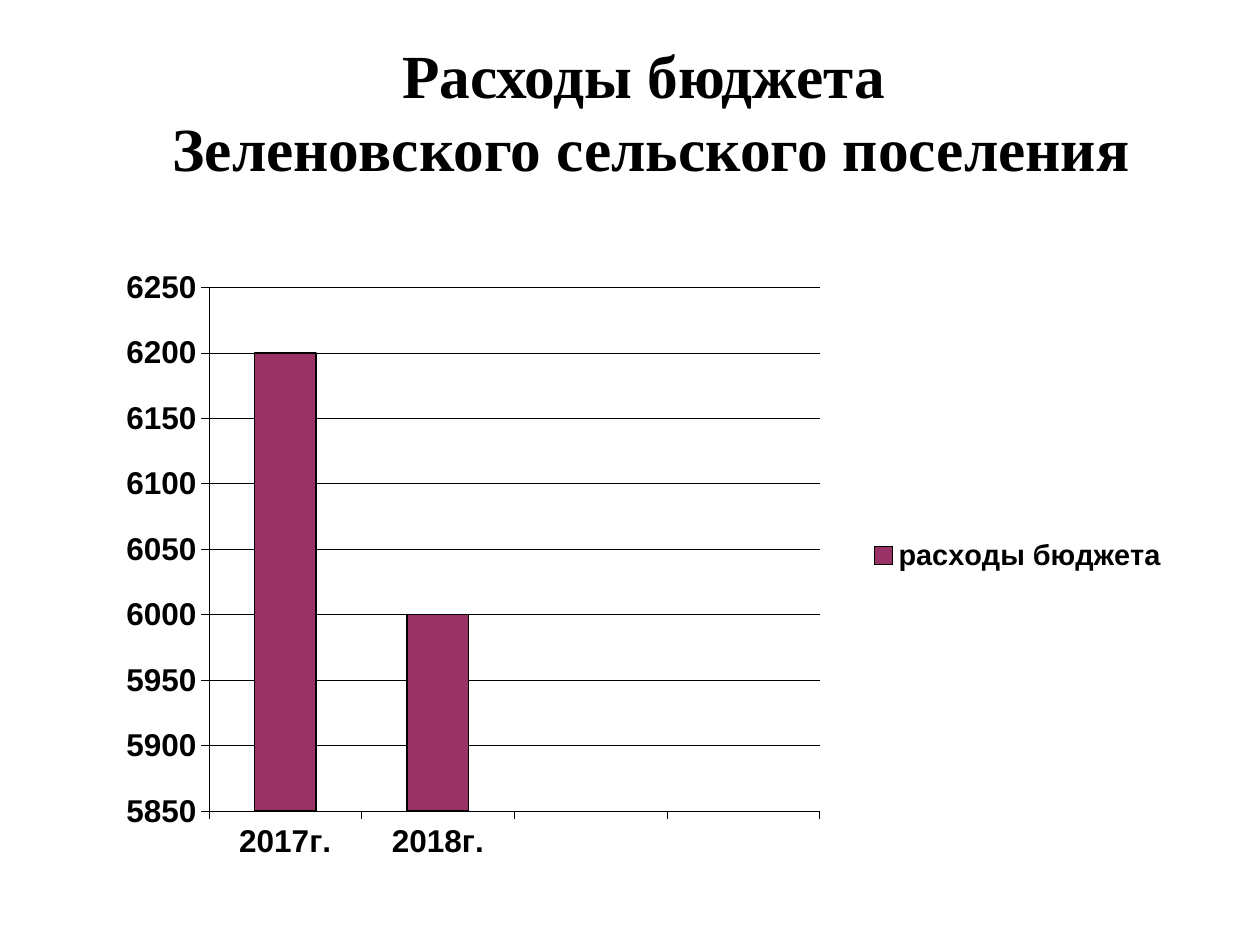
"""Build a slide with a column chart of a rural settlement's budget spending."""
from dataclasses import dataclass

from lxml.etree import SubElement
from pptx import Presentation
from pptx.chart.data import CategoryChartData
from pptx.dml.color import RGBColor
from pptx.enum.chart import XL_CHART_TYPE as ChartType
from pptx.enum.chart import XL_LEGEND_POSITION as LegendPos
from pptx.enum.chart import XL_TICK_LABEL_POSITION as LabelPos
from pptx.enum.chart import XL_TICK_MARK as Tick
from pptx.enum.text import MSO_ANCHOR as Anchor
from pptx.enum.text import PP_ALIGN as Align
from pptx.oxml.ns import qn
from pptx.util import Inches, Pt


@dataclass(frozen=True)
class Theme:
    ink: RGBColor = RGBColor(0, 0, 0)
    bar: RGBColor = RGBColor(0x99, 0x33, 0x66)
    title_font: str = "Times New Roman"
    chart_font: str = "Arial"
    title_size: float = 35
    axis_size: float = 18
    legend_size: float = 16.5
    hairline: float = 0.25
    outline: float = 1


@dataclass(frozen=True)
class Box:
    x: float
    y: float
    w: float
    h: float

    def on(self, width: int, height: int) -> tuple[int, ...]:
        return (int(self.x * width), int(self.y * height),
                int(self.w * width), int(self.h * height))


THEME = Theme()
WIDTH, HEIGHT = 10, 7.5
TITLE_BOX = Box(0.67 / WIDTH, 0.25 / HEIGHT, 9 / WIDTH, 1.25 / HEIGHT)
CHART_BOX = Box(0.58 / WIDTH, 2.08 / HEIGHT, 8.98 / WIDTH, 5.01 / HEIGHT)
PLOT_BOX = Box(0.12, 0.04, 0.54, 0.83)
LEGEND_BOX = Box(0.68, 0.43, 0.31, 0.07)
TITLE = ("Расходы бюджета ", "Зеленовского сельского поселения")
SERIES = "расходы бюджета"
SPENDING = (("2017г.", 6200), ("2018г.", 6000), ("", None), ("", None))


def set_font(font, size: float, name: str) -> None:
    font.size, font.name, font.bold = Pt(size), name, True
    font.color.rgb = THEME.ink


def set_line(line, width: float) -> None:
    line.color.rgb = THEME.ink
    line.width = Pt(width)


def add_text(slide, place: tuple[int, ...], lines: tuple[str, ...], *, size: float,
             font: str, align: Align) -> None:
    tf = slide.shapes.add_textbox(*place).text_frame
    tf.word_wrap = True
    tf.vertical_anchor = Anchor.MIDDLE
    for i, line in enumerate(lines):
        p = tf.add_paragraph() if i else tf.paragraphs[0]
        p.alignment = align
        r = p.add_run()
        r.text = line
        set_font(r.font, size, font)


def set_layout(parent, index: int, box: Box, inner: bool = False) -> None:
    for old in parent.findall(qn("c:layout")):
        parent.remove(old)
    layout = SubElement(parent, qn("c:layout"))
    parent.insert(index, layout)
    manual = SubElement(layout, qn("c:manualLayout"))
    values = {"layoutTarget": "inner"} if inner else {}
    values |= {"xMode": "edge", "yMode": "edge",
               "x": box.x, "y": box.y, "w": box.w, "h": box.h}
    for tag, value in values.items():
        SubElement(manual, qn(f"c:{tag}")).set("val", str(value))


def style_axis(axis) -> None:
    axis.major_tick_mark, axis.minor_tick_mark = Tick.OUTSIDE, Tick.NONE
    set_font(axis.tick_labels.font, THEME.axis_size, THEME.chart_font)
    set_line(axis.format.line, THEME.hairline)


def add_spending_chart(slide, place: tuple[int, ...]) -> None:
    data = CategoryChartData(number_format="General")
    data.categories = [year for year, _ in SPENDING]
    data.add_series(SERIES, [value for _, value in SPENDING])
    chart = slide.shapes.add_chart(ChartType.COLUMN_CLUSTERED, *place, data).chart
    chart.has_title = False
    set_font(chart.font, THEME.axis_size, THEME.chart_font)

    plot = chart.plots[0]
    plot.gap_width, plot.vary_by_categories = 150, False
    series = plot.series[0]
    series.format.fill.solid()
    series.format.fill.fore_color.rgb = THEME.bar
    set_line(series.format.line, THEME.outline)

    years, amounts = chart.category_axis, chart.value_axis
    for axis in (years, amounts):
        style_axis(axis)
    years.tick_label_position = LabelPos.LOW
    amounts.minimum_scale, amounts.maximum_scale = 5850, 6250
    amounts.major_unit = 50
    amounts.has_major_gridlines = True
    set_line(amounts.major_gridlines.format.line, THEME.hairline)

    chart.has_legend = True
    legend = chart.legend
    legend.position, legend.include_in_layout = LegendPos.RIGHT, False
    set_font(legend.font, THEME.legend_size, THEME.chart_font)
    root = chart.element
    set_layout(root.find(".//" + qn("c:plotArea")), 0, PLOT_BOX, inner=True)
    set_layout(root.find(".//" + qn("c:legend")), 1, LEGEND_BOX)


def main() -> None:
    prs = Presentation()
    prs.slide_width, prs.slide_height = Inches(WIDTH), Inches(HEIGHT)
    size = prs.slide_width, prs.slide_height
    slide = prs.slides.add_slide(prs.slide_layouts[6])
    add_text(slide, TITLE_BOX.on(*size), TITLE, size=THEME.title_size,
             font=THEME.title_font, align=Align.CENTER)
    add_spending_chart(slide, CHART_BOX.on(*size))
    prs.save("out.pptx")


if __name__ == "__main__":
    main()
